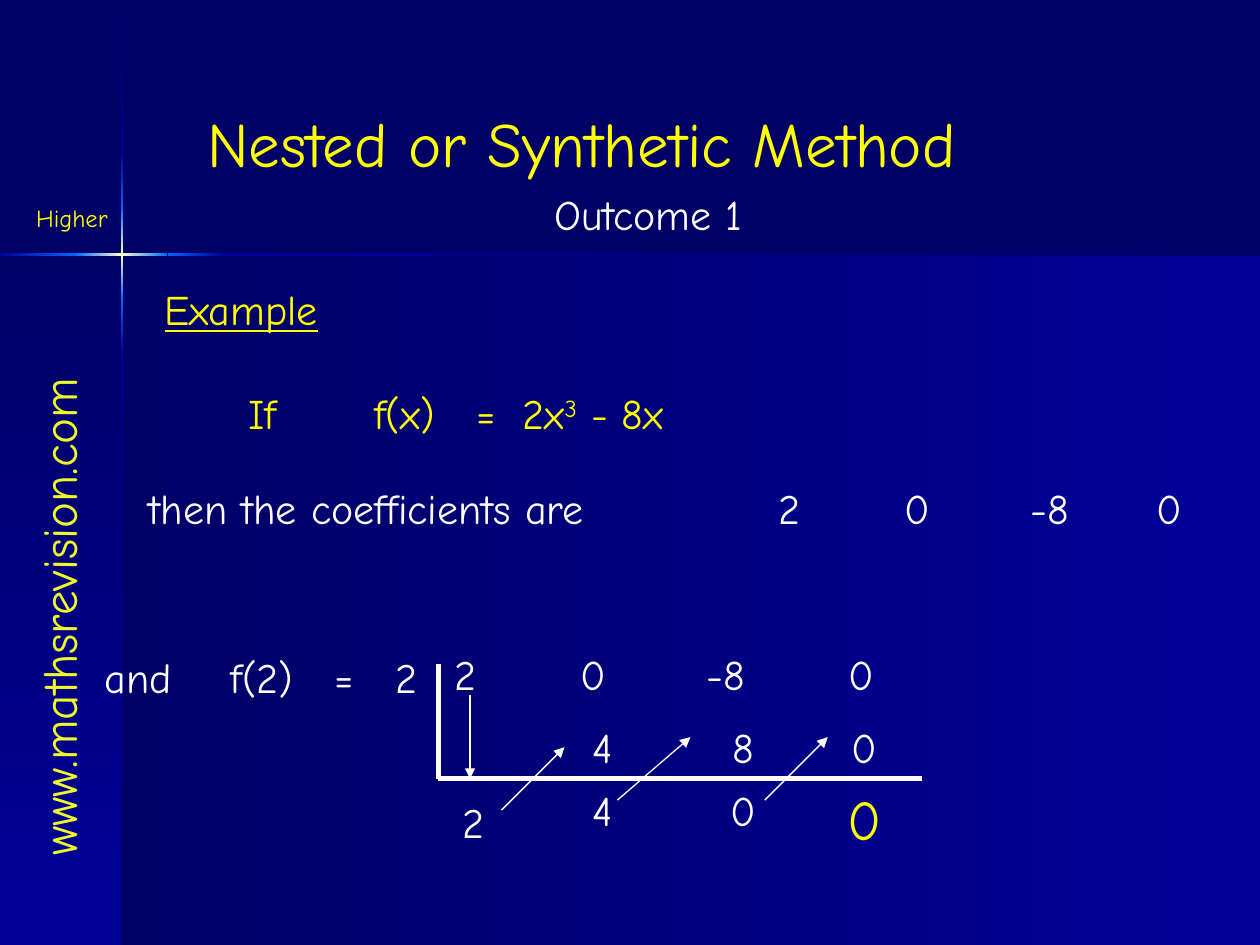
from copy import deepcopy
from lxml import etree
from pptx import Presentation
from pptx.dml.color import RGBColor
from pptx.enum.shapes import MSO_CONNECTOR, MSO_SHAPE
from pptx.enum.text import PP_ALIGN
from pptx.oxml.ns import qn
from pptx.util import Inches, Pt

STRAIGHT, RECTANGLE = MSO_CONNECTOR.STRAIGHT, MSO_SHAPE.RECTANGLE
LEFT, CENTER = PP_ALIGN.LEFT, PP_ALIGN.CENTER
FONT = "Comic Neue"
COLORS = {"navy": "000066", "blue": "000099", "bright": "0066FF", "cream": "FFFFCC",
          "lime": "EEF82A", "yellow": "FFFF00", "white": "FFFFFF"}

deck = Presentation()
deck.slide_width, deck.slide_height = Inches(10), Inches(7.5)
# Grid of 100 columns by 75 rows
COL, ROW = deck.slide_width / 100, deck.slide_height / 75
page = deck.slides.add_slide(deck.slide_layouts[6])
page.background.fill.solid()
page.background.fill.fore_color.rgb = RGBColor.from_string(COLORS["navy"])


def add_text(text, left, top, width, height, color="white", size=24, align=CENTER, start=None, stops=()):
    """Add one line; start and stops are the columns where its tabbed parts begin."""
    box = page.shapes.add_textbox(int(left * COL), int(top * ROW), int(width * COL), int(height * ROW))
    frame = box.text_frame
    frame.word_wrap = True
    frame.text = text
    para = frame.paragraphs[0]
    para.alignment = align
    if start is not None:
        para.alignment = LEFT
        frame.margin_left = int((start - left) * COL)
        tabs = etree.SubElement(para._p.get_or_add_pPr(), qn("a:tabLst"))
        for stop in stops:
            etree.SubElement(tabs, qn("a:tab"), pos=str(int((stop - start) * COL)), algn="l")
    for span in para.runs:
        span.font.name, span.font.size = FONT, Pt(size)
        span.font.color.rgb = RGBColor.from_string(COLORS[color])
    return box


def add_line(x1, y1, x2, y2, weight, arrow=False):
    line = page.shapes.add_connector(STRAIGHT, int(x1 * COL), int(y1 * ROW), int(x2 * COL), int(y2 * ROW))
    line.line.color.rgb = RGBColor.from_string(COLORS["white"])
    line.line.width = Pt(weight)
    if arrow:
        etree.SubElement(line.line._get_or_add_ln(), qn("a:tailEnd"), type="triangle")
    etree.SubElement(line._element.spPr, qn("a:effectLst"))


# Background panels and the glowing cross: left, top, width, height, runs downward, colours
glow = ("bright", "cream", "bright")
bands = [
    (9.7, 20.2, 90.3, 54.8, False, ("navy", "blue")),
    (0, 20.2, 9.7, 54.8, True, ("navy", "blue")),
    (9.6, 0.1, 0.2, 12.1, True, ("navy", "blue")),
    (9.6, 28.2, 0.2, 46.8, True, ("blue", "navy")),
    (17.7, 20.1, 82.3, 0.2, False, ("blue", "navy")),
    (9.6, 23.8, 0.2, 4.4, True, ("bright", "blue")),
    (9.6, 12.1, 0.2, 4.4, True, ("blue", "bright")),
    (9.6, 16.5, 0.2, 7.3, True, glow),
    (0, 20.1, 6.1, 0.2, False, ("blue", "bright")),
    (13.3, 20.1, 4.4, 0.2, False, ("bright", "blue")),
    (6, 20.1, 7.3, 0.2, False, glow),
]
for left, top, width, height, downward, names in bands:
    band = page.shapes.add_shape(RECTANGLE, int(left * COL), int(top * ROW), int(width * COL), int(height * ROW))
    band.shadow.inherit = False
    band.line.fill.background()
    band.fill.gradient()
    band.fill.gradient_angle = 270 if downward else 0
    stop_list = band._element.spPr.find(".//" + qn("a:gsLst"))
    if len(names) == 3:
        stop_list.insert(1, deepcopy(stop_list[0]))
    for index, (stop, name) in enumerate(zip(band.fill.gradient_stops, names)):
        stop.position = index / (len(names) - 1)
        stop.color.rgb = RGBColor.from_string(COLORS[name])

# Headings
add_text("www.mathsrevision.com", -17.3, 44.1, 43.9, 5.7, "lime", 28, LEFT).rotation = 270
add_text("Higher", 1.6, 15.6, 8.2, 3.4, "yellow", 14)
add_text("Outcome 1", 42.3, 14.5, 18.3, 5)
add_text("Nested or Synthetic Method", 7, 7.8, 78.3, 7, "yellow", 36)
example = add_text("Example", 5, 22, 28.3, 5, "yellow")
example.text_frame.paragraphs[0].runs[0].font.underline = True

# The function and its coefficients
function = add_text("If\tf(x)\t=\t2x", 5.8, 30.3, 60.8, 5, "yellow", start=19.7, stops=(29.7, 37.8, 41.5))
para = function.text_frame.paragraphs[0]
for text, baseline in (("3", "30000"), (" - 8x", "0")):
    span = para.add_run()
    span.text = text
    span.font.name, span.font.size = FONT, Pt(24)
    span.font.color.rgb = RGBColor.from_string(COLORS["yellow"])
    span._r.get_or_add_rPr().set("baseline", baseline)
add_text("then the coefficients are\t2\t0\t-8\t0", 9.7, 37.8, 86.7, 5, start=11.8, stops=(61.8, 71.8, 81.8, 91.8))

# Synthetic division
add_text("and\tf(2)\t=\t2", 7.3, 51.2, 28.8, 5, start=8.3, stops=(18.3, 26.6, 31.4))
add_line(34.8, 52.7, 34.8, 61.8, 3)
add_line(34.8, 61.8, 73.2, 61.8, 3)
add_text("2\t0\t-8\t0", 34.2, 51, 37.5, 5, start=36.1, stops=(46.1, 56.1, 67.3))
add_text("2", 35.7, 62.7, 3.3, 5)
for left, width, product, total in ((45.7, 4.2, "4", "4"), (56.5, 5, "8", "0")):
    add_text(product, left, 56.8, width, 5)
    add_text(total, left, 61.8, width, 5)
add_text("0", 65.7, 56.8, 5.8, 5)
add_text("0", 65.7, 61.8, 5.8, 6.4, "yellow", 32)
for ends in ((37.3, 55.2, 37.3, 61.8), (39.8, 64.3, 44.8, 59.3),
             (49, 63.5, 54.8, 58.5), (60.7, 63.5, 65.7, 58.5)):
    add_line(*ends, 0.75, arrow=True)

deck.save("out.pptx")
